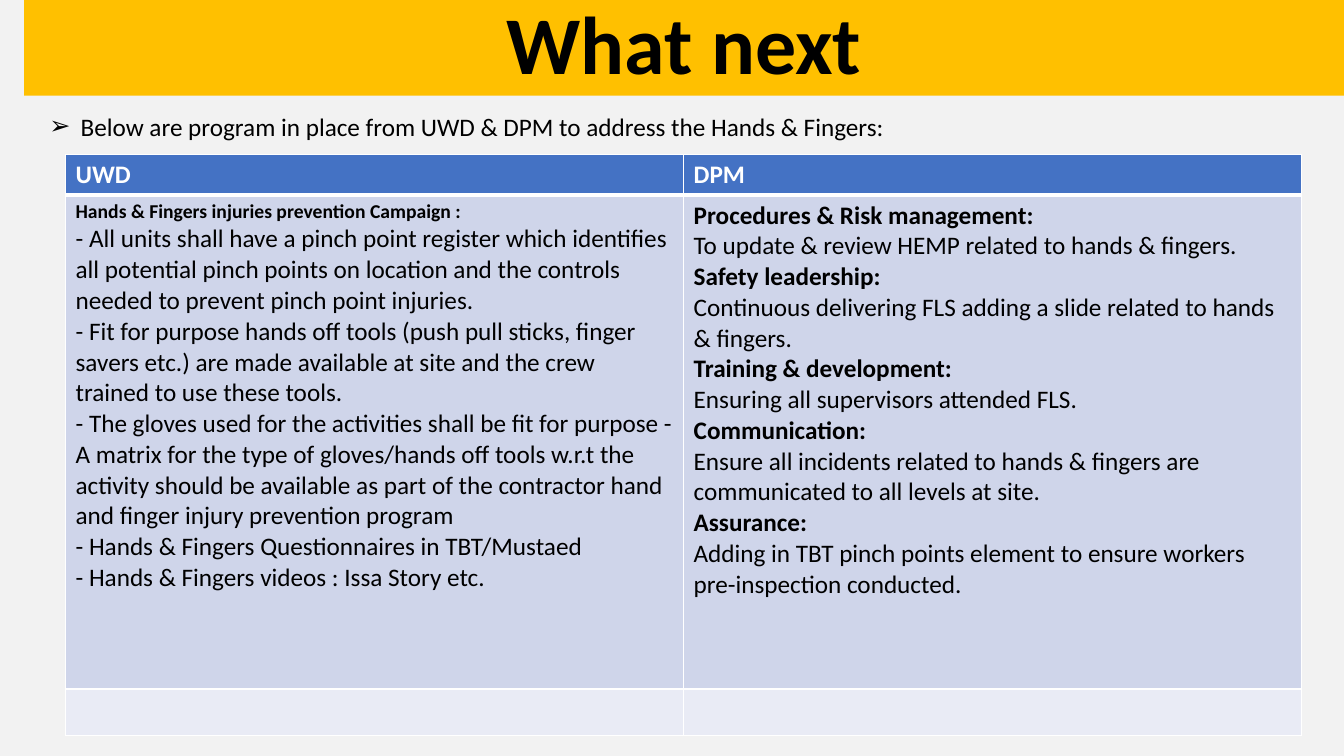
from dataclasses import dataclass

from lxml import etree
from pptx import Presentation
from pptx import util as u
from pptx.dml.color import RGBColor
from pptx.enum import text
from pptx.oxml import ns


@dataclass(frozen=True)
class Theme:
    font: str = "Calibri"
    page: str = "F2F2F2"
    banner: str = "FFC000"
    header: str = "4472C4"
    band: str = "CFD5EA"
    pale: str = "E9EBF5"
    dark: str = "000000"
    light: str = "FFFFFF"
    title_size: float = 58.5
    body_size: float = 18
    small_size: float = 14
    thin: float = 1
    thick: float = 3


THEME = Theme()


def colour(value):
    return RGBColor.from_string(value)


def paint(target, value):
    target.fill.solid()
    target.fill.fore_color.rgb = colour(value)


def write(para, words, *, size=THEME.body_size, color=THEME.dark, bold=False,
          align=text.PP_ALIGN.LEFT, spacing=1.0, bullet=None, indent=0.31):
    """Fill one paragraph with formatted words."""
    if bullet:
        props = para._p.get_or_add_pPr()
        props.set("marL", str(u.Inches(indent)))
        props.set("indent", str(-u.Inches(indent)))
        etree.SubElement(props, ns.qn("a:buChar")).set("char", bullet)
    para.alignment = align
    para.line_spacing = spacing
    para.space_before = para.space_after = u.Pt(0)
    span = para.add_run()
    span.text = words
    span.font.name = THEME.font
    span.font.size = u.Pt(size)
    span.font.bold = bold
    span.font.color.rgb = colour(color)


class Slide:
    def __init__(self, deck, theme):
        self.theme = theme
        self.page = deck.slides.add_slide(deck.slide_layouts[1])
        paint(self.page.background, theme.page)

    def place(self, box, left, top, width, height, anchor):
        box.left, box.top = u.Inches(left), u.Inches(top)
        box.width, box.height = u.Inches(width), u.Inches(height)
        frame = box.text_frame
        frame.word_wrap = True
        frame.auto_size = text.MSO_AUTO_SIZE.NONE
        frame.vertical_anchor = anchor
        return frame.paragraphs[0]

    def title(self, words, *place):
        box = self.page.shapes.title
        paint(box, self.theme.banner)
        para = self.place(box, *place, text.MSO_ANCHOR.BOTTOM)
        write(para, words, size=self.theme.title_size, bold=True,
              align=text.PP_ALIGN.CENTER, spacing=0.8)

    def lead(self, words, *place):
        para = self.place(self.page.placeholders[1], *place, text.MSO_ANCHOR.TOP)
        write(para, words, bullet="➢")

    def borders(self, cell, **widths):
        props = cell._tc.get_or_add_tcPr()
        for side in "LRTB":
            line = etree.SubElement(props, ns.qn(f"a:ln{side}"))
            line.set("w", str(u.Pt(widths.get(side, self.theme.thin))))
            fill = etree.SubElement(line, ns.qn("a:solidFill"))
            etree.SubElement(fill, ns.qn("a:srgbClr")).set("val", self.theme.light)

    def table(self, rows, heights, fills, left, top, width):
        frame = self.page.shapes.add_table(
            len(rows), len(rows[0]), u.Inches(left), u.Inches(top),
            u.Inches(width), u.Inches(sum(heights)))
        grid = frame.table
        grid.first_row = grid.horz_banding = False
        edges = [{"B": self.theme.thick}, {"T": self.theme.thick}, {}]
        for r, row in enumerate(rows):
            grid.rows[r].height = u.Inches(heights[r])
            for c, entries in enumerate(row):
                cell = grid.cell(r, c)
                self.borders(cell, **edges[r])
                paint(cell, fills[r])
                for i, (words, style) in enumerate(entries):
                    box = cell.text_frame
                    para = box.add_paragraph() if i else box.paragraphs[0]
                    write(para, words, **style)


# Table content: each cell is a list of (words, style)
HEADING = {"bold": True}
HEADER = {"bold": True, "color": THEME.light}

CAMPAIGN = [
    ("Hands & Fingers injuries prevention Campaign :",
     {"bold": True, "size": THEME.small_size}),
    *((words, {}) for words in (
        "- All units shall have a pinch point register which identifies all "
        "potential pinch points on location and the controls needed to "
        "prevent pinch point injuries.",
        "- Fit for purpose hands off tools (push pull sticks, finger savers "
        "etc.) are made available at site and the crew trained to use these "
        "tools.",
        "- The gloves used for the activities shall be fit for purpose - A "
        "matrix for the type of gloves/hands off tools w.r.t the activity "
        "should be available as part of the contractor hand and finger "
        "injury prevention program",
        "- Hands & Fingers Questionnaires in TBT/Mustaed",
        "- Hands & Fingers videos : Issa Story etc.",
    )),
]

PROGRAMS = {
    "Procedures & Risk management:":
        "To update & review HEMP related to hands & fingers.",
    "Safety leadership:":
        "Continuous delivering FLS adding a slide related to hands & fingers.",
    "Training & development:":
        "Ensuring all supervisors attended FLS.",
    "Communication:":
        "Ensure all incidents related to hands & fingers are communicated to "
        "all levels at site.",
    "Assurance:":
        "Adding in TBT pinch points element to ensure workers pre-inspection "
        "conducted.",
}


def main():
    deck = Presentation()
    deck.slide_width, deck.slide_height = u.Inches(13.33), u.Inches(7.5)
    slide = Slide(deck, THEME)

    # Banner and lead line
    slide.title("What next", 0.24, 0, 13.09, 0.95)
    slide.lead("Below are program in place from UWD & DPM to address the "
               "Hands & Fingers:", 0.39, 1.05, 11.58, 0.4)

    # Program table
    programs = [entry for heading, action in PROGRAMS.items()
                for entry in ((heading, HEADING), (action, {}))]
    rows = [
        [[("UWD", HEADER)], [("DPM", HEADER)]],
        [CAMPAIGN, programs],
        [[], []],
    ]
    slide.table(rows, [0.39, 4.9, 0.46], [THEME.header, THEME.band, THEME.pale],
                0.65, 1.53, 12.26)

    deck.save("out.pptx")


if __name__ == "__main__":
    main()
